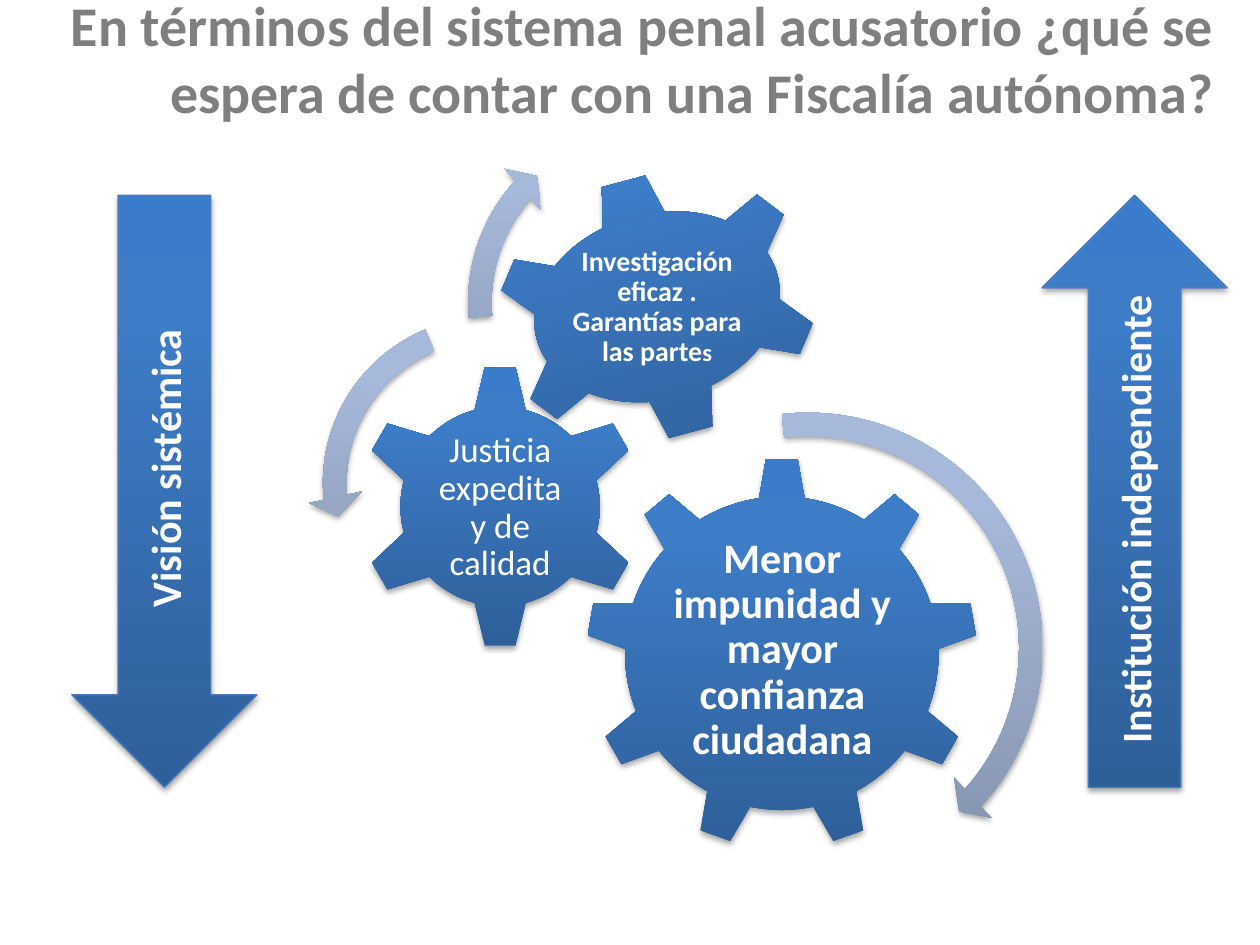
import copy

import pptx
import pptx.dml.color
import pptx.enum.shapes
import pptx.enum.text
import pptx.oxml
import pptx.oxml.ns
import pptx.util

Inches = pptx.util.Inches
Pt = pptx.util.Pt
RGB = pptx.dml.color.RGBColor.from_string
KIND = pptx.enum.shapes.MSO_SHAPE
ALIGN = pptx.enum.text.PP_ALIGN
MID = pptx.enum.text.MSO_ANCHOR.MIDDLE

COLORS = {"title": "7F7F7F", "text": "FFFFFF", "edge": "4B7EBC"}
BLUE = [(0, "2F5F99"), (0.8, "3D7CC7"), (1, "3A7CCB")]
PALE = [(0, "818FA8"), (0.8, "A7B9DA"), (1, "A7BADC")]
SHADE = (
    '<a:outerShdw %s blurRad="40000" dist="23000" dir="5400000" rotWithShape="0">'
    '<a:srgbClr val="000000"><a:alpha val="35000"/></a:srgbClr></a:outerShdw>'
    % pptx.oxml.ns.nsdecls("a")
)


def add_solid(kind, box, stops):
    """Add a shape with a vertical gradient, a soft shadow and no line."""
    shape = slide.shapes.add_shape(kind, *map(Inches, box))
    fill = shape.fill
    fill.gradient()
    fill.gradient_angle = 90
    props = shape._element.spPr
    first = props.find(".//" + pptx.oxml.ns.qn("a:gs"))
    first.addnext(copy.deepcopy(first))
    for stop, (place, color) in zip(fill.gradient_stops, stops):
        stop.position = place
        stop.color.rgb = RGB(color)
    shape.line.fill.background()
    shape.shadow.inherit = False
    props.find(pptx.oxml.ns.qn("a:effectLst")).append(pptx.oxml.parse_xml(SHADE))
    return shape


def write(frame, runs, align, color):
    """Fill a frame with one paragraph of (text, size, bold) runs."""
    frame.word_wrap = True
    frame.auto_size = pptx.enum.text.MSO_AUTO_SIZE.NONE
    frame.vertical_anchor = MID
    para = frame.paragraphs[0]
    para.alignment = align
    for text, size, bold in runs:
        run = para.add_run()
        run.text = text
        look = {"name": "Calibri", "size": Pt(size), "bold": bold}
        for key, value in look.items():
            setattr(run.font, key, value)
        run.font.color.rgb = RGB(COLORS[color])
    return para


deck = pptx.Presentation()
deck.slide_width, deck.slide_height = Inches(10), Inches(7.5)
slide = deck.slides.add_slide(deck.slide_layouts[5])

title = slide.shapes.title
title.left, title.top, title.width, title.height = map(Inches, (0.25, 0.11, 9.49, 0.7))
head = "En términos del sistema penal acusatorio ¿qué se espera de contar con una Fiscalía autónoma?"
write(title.text_frame, [(head, 32, True)], ALIGN.RIGHT, "title")

# Gears: kind, box, turn, text box, inset, runs
gears = [
    (KIND.GEAR_9, (4.65, 3.63, 3.11, 3.11), 0, (5.28, 4.36, 1.86, 1.6), 0.03,
     [("Menor impunidad y mayor confianza ciudadana", 24, True)]),
    (KIND.GEAR_6, (2.84, 2.89, 2.26, 2.26), 0, (3.41, 3.47, 1.12, 1.12), 0.03,
     [("Justicia expedita y de calidad", 20, False)]),
    (KIND.GEAR_6, (3.91, 1.38, 2.61, 2.11), 345, (4.51, 1.82, 1.41, 1.24), 0.02,
     [("Investigación eficaz . Garantías para las parte", 16, True), ("s", 14, True)]),
]
for kind, box, turn, area, inset, runs in gears:
    add_solid(kind, box, BLUE).rotation = turn
    frame = slide.shapes.add_textbox(*map(Inches, area)).text_frame
    for side in ("left", "top", "right", "bottom"):
        setattr(frame, "margin_" + side, Inches(inset))
    write(frame, runs, ALIGN.CENTER, "text").line_spacing = 0.9

# Curved arrows: kind, left, top, size, adjustments
curves = [
    (KIND.CIRCULAR_ARROW, 4.42, 3.15, 3.98, (0.047, 2.99, 25.354, 158.203, 0.055)),
    (KIND.LEFT_CIRCULAR_ARROW, 2.44, 2.39, 2.89, (0.065, 4.3, 104.891, 148.378, 0.075)),
    (KIND.CIRCULAR_ARROW, 3.59, 0.84, 3.12, (0.06, 3.941, 133.138, 105.082, 0.07)),
]
for kind, left, top, size, bends in curves:
    curve = add_solid(kind, (left, top, size, size), PALE)
    for i, bend in enumerate(bends):
        curve.adjustments[i] = bend

# Side arrows with upright text
sides = [
    (KIND.DOWN_ARROW, 0.57, "Visión sistémica"),
    (KIND.UP_ARROW, 8.27, "Institución independiente "),
]
for kind, left, text in sides:
    arrow = add_solid(kind, (left, 1.55, 1.47, 4.7), BLUE)
    arrow.line.color.rgb = RGB(COLORS["edge"])
    arrow.line.width = Pt(0.75)
    write(arrow.text_frame, [(text, 24, True)], ALIGN.CENTER, "text")
    arrow.text_frame._txBody.bodyPr.set("vert", "vert270")

deck.save("out.pptx")
